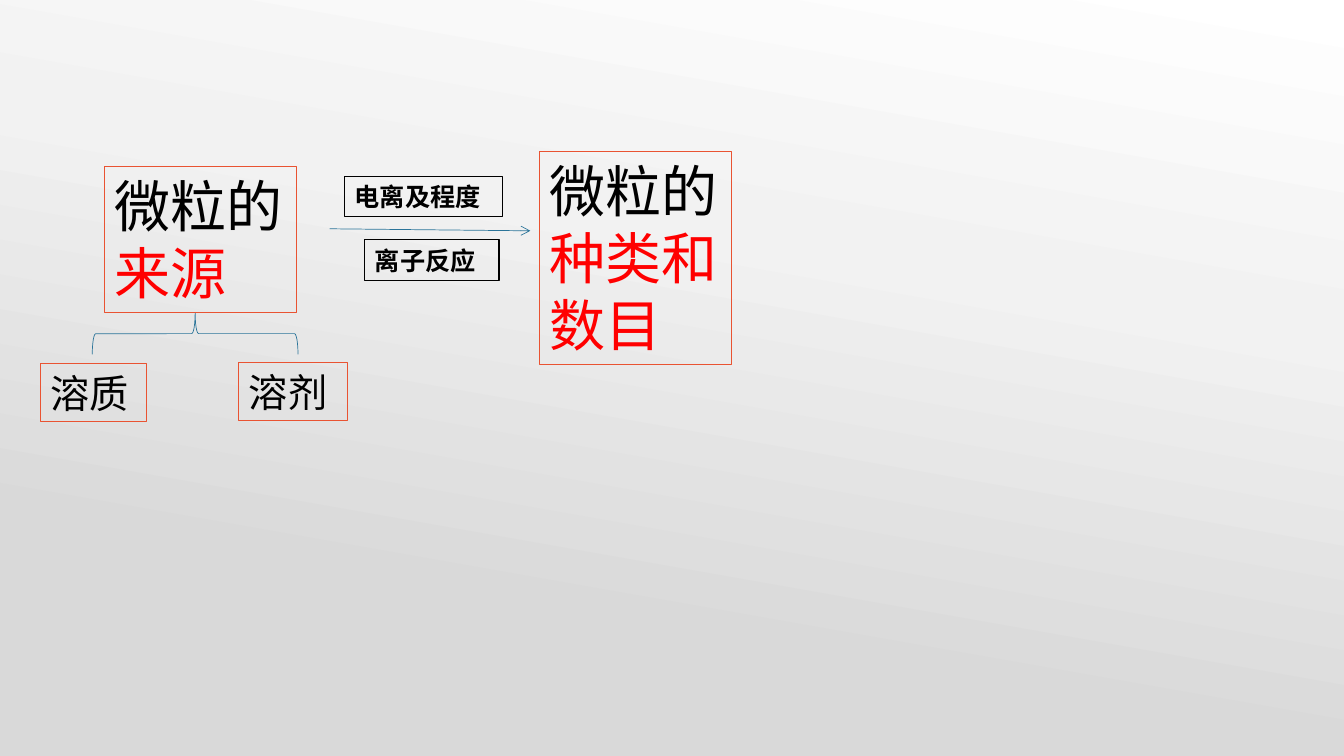
from dataclasses import dataclass

from lxml import etree
from pptx import Presentation
from pptx.dml.color import RGBColor
from pptx.enum import shapes, text
from pptx.oxml import ns
from pptx.util import Inches, Pt

BLACK, RED, ORANGE, BLUE = "000000", "FF0000", "E95332", "2B7499"
BACKGROUND_STOPS = ((0, "FFFFFF"), (34, "F2F2F2"), (76, "D9D9D9"))
BACKGROUND_ANGLE = 100


@dataclass(frozen=True)
class Label:
    left: float
    top: float
    width: float
    height: float
    size: int
    wording: str
    emphasis: str = ""
    border: str = ORANGE
    bold: bool = False


LABELS = (
    Label(1.04, 1.65, 1.9, 1.45, 40, "微粒的", "来源"),
    Label(0.4, 3.61, 1.05, 0.57, 28, "溶质"),
    Label(2.37, 3.6, 1.08, 0.57, 28, "溶剂"),
    Label(3.42, 1.75, 1.56, 0.4, 18, "电离及程度", border=BLACK, bold=True),
    Label(3.62, 2.38, 1.33, 0.4, 18, "离子反应", border=BLACK, bold=True),
    Label(5.35, 1.5, 1.91, 2.12, 40, "微粒的", "种类和数目"),
)


def color(value: str) -> RGBColor:
    return RGBColor.from_string(value)


def set_line(shape, value: str, width: float) -> None:
    shape.line.color.rgb = color(value)
    shape.line.width = Pt(width)


def add_background(slide, width: int, height: int) -> None:
    panel = slide.shapes.add_shape(shapes.MSO_SHAPE.RECTANGLE, 0, 0, width, height)
    panel.shadow.inherit = False
    panel.line.fill.background()
    panel.fill.gradient()
    gradient = panel._element.spPr.find(ns.qn("a:gradFill"))
    stops = gradient.find(ns.qn("a:gsLst"))
    for stop in list(stops):
        stops.remove(stop)
    for percent, value in BACKGROUND_STOPS:
        stop = etree.SubElement(stops, ns.qn("a:gs"), pos=str(percent * 1000))
        etree.SubElement(stop, ns.qn("a:srgbClr"), val=value)
    direction = gradient.find(ns.qn("a:lin"))
    direction.set("ang", str(BACKGROUND_ANGLE * 60000))
    direction.set("scaled", "0")


def add_label(slide, label: Label) -> None:
    box = slide.shapes.add_textbox(
        Inches(label.left), Inches(label.top), Inches(label.width), Inches(label.height)
    )
    set_line(box, label.border, 0.75)
    frame = box.text_frame
    frame.word_wrap = True
    frame.auto_size = text.MSO_AUTO_SIZE.SHAPE_TO_FIT_TEXT
    para = frame.paragraphs[0]
    para.text = label.wording
    if label.emphasis:
        para.add_run().text = label.emphasis
    for span, value in zip(para.runs, (BLACK, RED)):
        span.font.name = "Arial"
        span.font.size = Pt(label.size)
        span.font.bold = label.bold
        span.font.color.rgb = color(value)


def add_brace(slide) -> None:
    """Join the source box to its two components below."""
    brace = slide.shapes.add_shape(
        shapes.MSO_SHAPE.LEFT_BRACE, Inches(1.73), Inches(2.29), Inches(0.41), Inches(2.04)
    )
    brace.rotation = 90
    brace.shadow.inherit = False
    brace.fill.background()
    set_line(brace, BLUE, 0.5)


def add_arrow(slide) -> None:
    arrow = slide.shapes.add_connector(
        shapes.MSO_CONNECTOR.STRAIGHT, Inches(3.27), Inches(2.27), Inches(5.26), Inches(2.29)
    )
    set_line(arrow, BLUE, 0.5)
    etree.SubElement(arrow.line._get_or_add_ln(), ns.qn("a:tailEnd"), type="arrow")
    etree.SubElement(arrow._element.spPr, ns.qn("a:effectLst"))


def main() -> None:
    deck = Presentation()
    deck.slide_width, deck.slide_height = Inches(13.33), Inches(7.5)
    page = deck.slides.add_slide(deck.slide_layouts[6])
    add_background(page, deck.slide_width, deck.slide_height)
    add_brace(page)
    add_arrow(page)
    for label in LABELS:
        add_label(page, label)
    deck.save("out.pptx")


if __name__ == "__main__":
    main()
